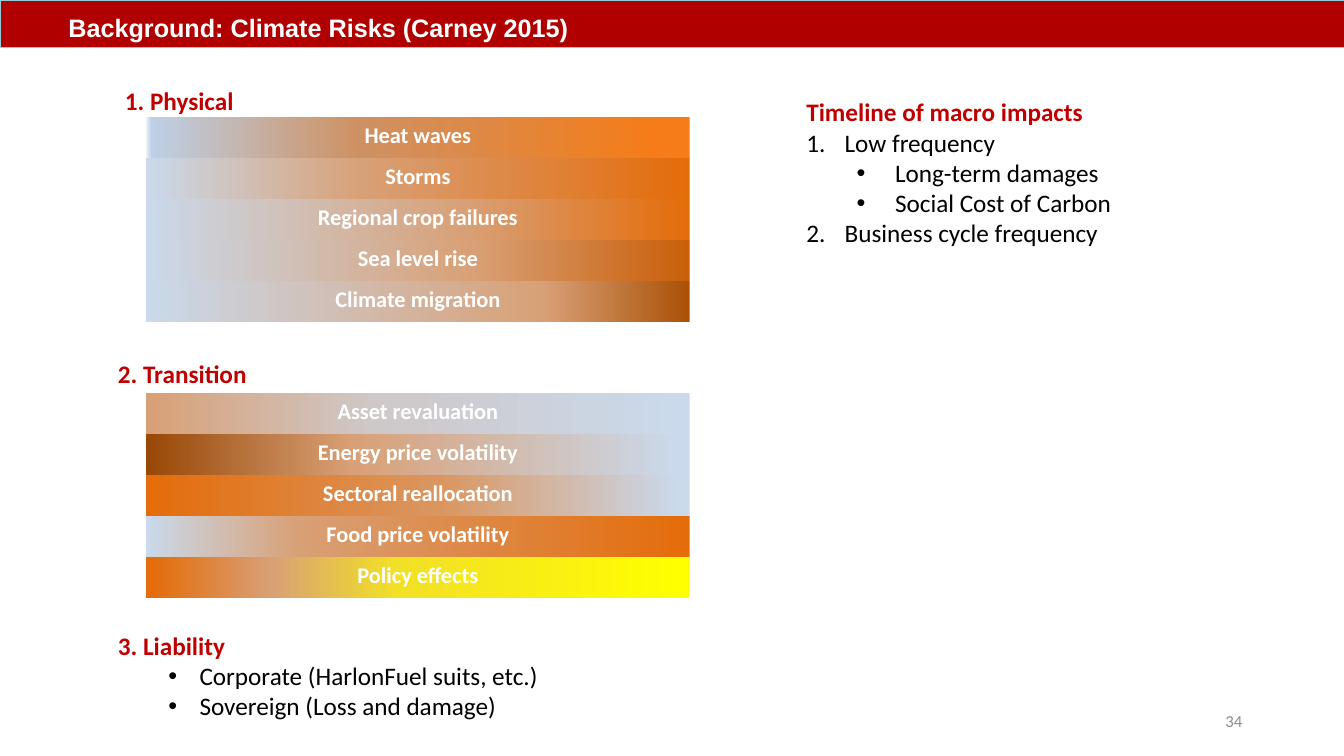
from lxml import etree
from pptx import Presentation
from pptx.dml.color import RGBColor
from pptx.enum.shapes import MSO_SHAPE
from pptx.enum.text import MSO_ANCHOR, MSO_AUTO_SIZE, PP_ALIGN
from pptx.oxml.ns import qn
from pptx.util import Inches, Pt

LEFT, CENTER, RIGHT = PP_ALIGN.LEFT, PP_ALIGN.CENTER, PP_ALIGN.RIGHT
RECT = MSO_SHAPE.RECTANGLE
BOTTOM, MIDDLE = MSO_ANCHOR.BOTTOM, MSO_ANCHOR.MIDDLE
FIT = MSO_AUTO_SIZE.SHAPE_TO_FIT_TEXT
PLAIN_TABLE = "{2D5ABB26-0587-4C30-8999-92F81FD0307C}"
RED, ORANGE, TAN, PALE = "C00000", "E46C0A", "D8A076", "CAD9EB"

prs = Presentation()
prs.slide_width, prs.slide_height = Inches(13.33), Inches(7.5)
COL, ROW = prs.slide_width / 100, prs.slide_height / 100
slide = prs.slides.add_slide(prs.slide_layouts[6])


def rgb(color):
    return RGBColor.from_string(color)


def write(tf, text, size=18, color="000000", bold=False, font="Calibri",
          align=LEFT, level=0, indent=0, hang=0, bullet=None):
    """Add a paragraph; bullet is a character, or "1." for automatic numbers."""
    p = tf.paragraphs[0] if not tf.text else tf.add_paragraph()
    p.alignment, p.level = align, level
    r = p.add_run()
    r.text = text
    r.font.name, r.font.size, r.font.bold = font, Pt(size), bold
    r.font.color.rgb = rgb(color)
    pPr = p._p.get_or_add_pPr()
    pPr.set("marL", str(Inches(indent)))
    pPr.set("indent", str(-Inches(hang)))
    if bullet == "1.":
        etree.SubElement(pPr, qn("a:buFont"), typeface="+mj-lt")
        etree.SubElement(pPr, qn("a:buAutoNum"), type="arabicPeriod")
    elif bullet:
        etree.SubElement(pPr, qn("a:buFont"), typeface="Arial")
        etree.SubElement(pPr, qn("a:buChar"), char=bullet)


# Title bar
bar = slide.shapes.add_shape(RECT, 0, 0, prs.slide_width, int(6.27 * ROW))
bar.shadow.inherit = False
bar.fill.solid()
bar.fill.fore_color.rgb = rgb("B00000")
bar.line.color.rgb = rgb("93CDDD")
bar.line.width = Pt(0.25)
bar.text_frame.vertical_anchor = BOTTOM
write(bar.text_frame, "Background: Climate Risks (Carney 2015)",
      color="FFFFFF", bold=True, font="Arial", indent=0.58)

# Page number
sp = slide.shapes.add_textbox(*(int(v) for v in (
    70.67 * COL, 92.67 * ROW, 22.5 * COL, 5.33 * ROW)))
sp.text_frame.word_wrap = True
sp.text_frame.vertical_anchor = MIDDLE
write(sp.text_frame, "34", size=12, color="8C8C8C", align=RIGHT)

# Headed lists: left, top, width, height, heading, items
number = dict(indent=0.38, hang=0.38, bullet="1.")
impact = dict(level=1, indent=0.88, hang=0.38, bullet="•")
liability = dict(level=1, indent=0.81, hang=0.31, bullet="•")
lists = [
    (59.26, 12.13, 25.36, 21.6, "Timeline of macro impacts", [
        ("Low frequency", number),
        ("Long-term damages", impact),
        ("Social Cost of Carbon", impact),
        ("Business cycle frequency", number)]),
    (8.55, 10.67, 9.68, 5.33, "1. Physical", []),
    (8.03, 46.67, 11.18, 5.33, "2. Transition", []),
    (8.03, 82.67, 33.68, 13.47, "3. Liability", [
        ("Corporate (HarlonFuel suits, etc.)", liability),
        ("Sovereign (Loss and damage)", liability)]),
]
for x, y, w, h, heading, items in lists:
    sp = slide.shapes.add_textbox(int(x * COL), int(y * ROW), int(w * COL), int(h * ROW))
    tf = sp.text_frame
    tf.word_wrap = False
    tf.auto_size = FIT
    write(tf, heading, color=RED, bold=True)
    for text, fmt in items:
        write(tf, text, **fmt)

# Risk tables: top, then each risk with its gradient stops from right to left
tables = [
    (15.47, [
        ("Heat waves", [(6, "F57C18"), (61, "CE9163"), (99, "BDD0E6"), (100, "EDF2F8")]),
        ("Storms", [(0, ORANGE), (60, TAN), (100, PALE)]),
        ("Regional crop failures", [(0, ORANGE), (41, TAN), (100, PALE)]),
        ("Sea level rise", [(0, "C95F09"), (40, TAN), (100, PALE)]),
        ("Climate migration", [(0, "AA5107"), (27, TAN), (100, PALE)])]),
    (52, [
        ("Asset revaluation", [(2, PALE), (58, "CEC8C8"), (100, TAN), (100, ORANGE)]),
        ("Energy price volatility", [(2, PALE), (62, TAN), (100, "984807")]),
        ("Sectoral reallocation", [(2, PALE), (46, "DA9661"), (100, ORANGE)]),
        ("Food price volatility", [(0, ORANGE), (72, TAN), (100, PALE)]),
        ("Policy effects", [(0, "FFFF00"), (54, "F2E026"), (77, TAN), (99, ORANGE)])]),
]
for top, risks in tables:
    frame = slide.shapes.add_table(len(risks), 1, int(10.88 * COL), int(top * ROW),
                                   int(40.43 * COL), int(27.07 * ROW))
    table = frame.table
    table.first_row = table.horz_banding = False
    table._tbl.tblPr.find(qn("a:tableStyleId")).text = PLAIN_TABLE
    for i, (risk, stops) in enumerate(risks):
        cell = table.cell(i, 0)
        write(cell.text_frame, risk, size=16, color="FFFFFF", bold=True, align=CENTER)
        grad = etree.SubElement(cell._tc.get_or_add_tcPr(), qn("a:gradFill"))
        gsLst = etree.SubElement(grad, qn("a:gsLst"))
        for pos, color in stops:
            gs = etree.SubElement(gsLst, qn("a:gs"), pos=str(pos * 1000))
            etree.SubElement(gs, qn("a:srgbClr"), val=color)
        etree.SubElement(grad, qn("a:lin"), ang=str(180 * 60000), scaled="0")

prs.save("out.pptx")
